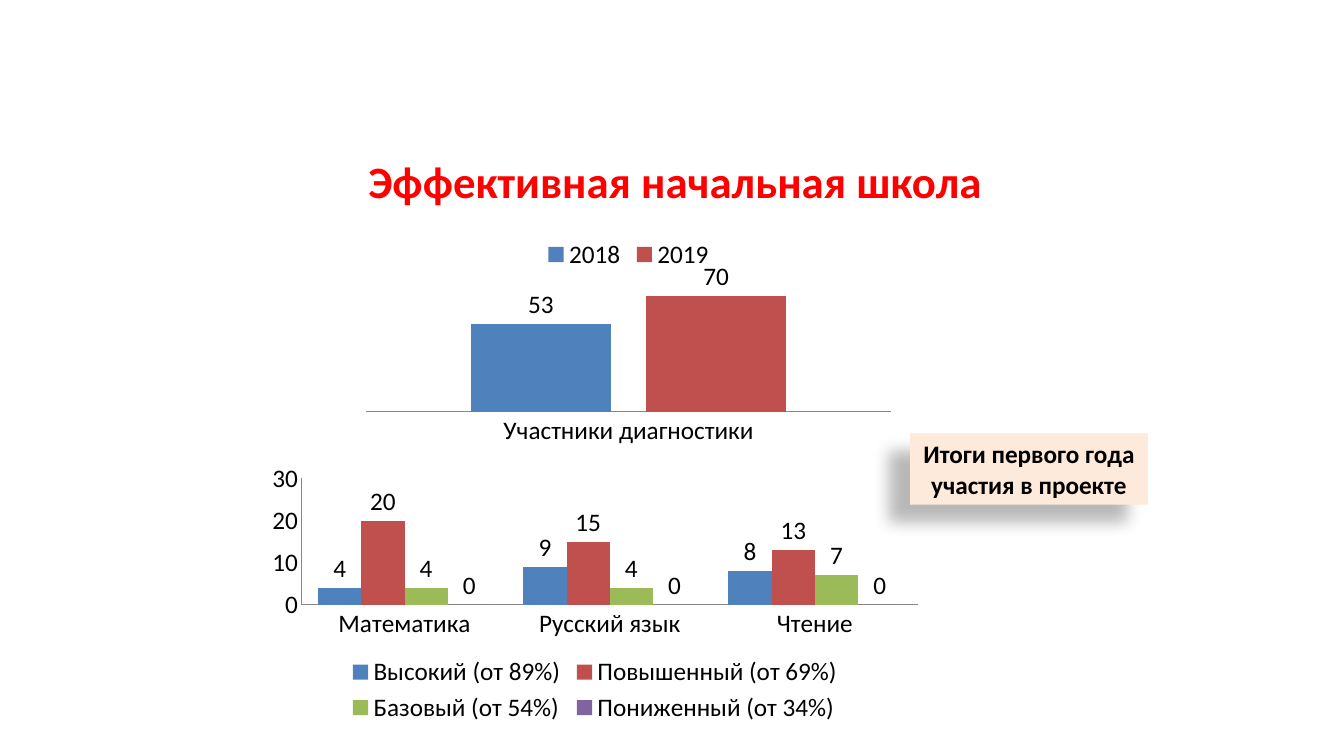
from dataclasses import dataclass

import pptx
import pptx.chart.data
import pptx.dml.color
import pptx.enum.chart
import pptx.enum.shapes
import pptx.enum.text
import pptx.oxml
import pptx.oxml.ns
import pptx.util
from pptx.util import Pt

RGBColor = pptx.dml.color.RGBColor
BLACK = RGBColor(0x00, 0x00, 0x00)
RED = RGBColor(0xFF, 0x00, 0x00)
PEACH = RGBColor(0xFD, 0xEA, 0xDA)
AXIS_GRAY = RGBColor(0x86, 0x86, 0x86)
SERIES_COLORS = (
    RGBColor(0x4F, 0x81, 0xBD),
    RGBColor(0xC0, 0x50, 0x4D),
    RGBColor(0x9B, 0xBB, 0x59),
    RGBColor(0x80, 0x64, 0xA2),
)
FONT = "Calibri"
LEGEND = pptx.enum.chart.XL_LEGEND_POSITION
NO_TICKS = pptx.enum.chart.XL_TICK_MARK.NONE


@dataclass
class Box:
    left: float
    top: float
    width: float
    height: float

    def lengths(self) -> tuple:
        return Pt(self.left), Pt(self.top), Pt(self.width), Pt(self.height)


@dataclass
class ColumnChart:
    box: Box
    categories: tuple
    series: dict
    legend: LEGEND
    gap: int
    overlap: int
    maximum: int
    step: int
    shows_values_axis: bool


PARTICIPANTS = ColumnChart(
    Box(253.5, 162, 391, 160), ("Участники диагностики",),
    {"2018": (53,), "2019": (70,)},
    LEGEND.TOP, 150, -25, 80, 10, False)

RESULTS = ColumnChart(
    Box(185, 327, 480, 193), ("Математика", "Русский язык", "Чтение"),
    {
        "Высокий (от 89%)": (4, 9, 8),
        "Повышенный (от 69%)": (20, 15, 13),
        "Базовый (от 54%)": (4, 4, 7),
        "Пониженный (от 34%)": (0, 0, 0),
    },
    LEGEND.BOTTOM, 75, 0, 30, 10, True)


def set_all(target, values: dict) -> None:
    for name, value in values.items():
        setattr(target, name, value)


def style_font(font, size: float, color: RGBColor, bold: bool) -> None:
    set_all(font, {"name": FONT, "size": Pt(size), "bold": bold})
    font.color.rgb = color


def write_centered(shape, text: str, size: float, color: RGBColor) -> None:
    shape.text_frame.word_wrap = True
    paragraph = shape.text_frame.paragraphs[0]
    paragraph.alignment = pptx.enum.text.PP_ALIGN.CENTER
    run = paragraph.add_run()
    run.text = text
    style_font(run.font, size, color, True)


def draw_chart(slide, item: ColumnChart) -> None:
    data = pptx.chart.data.CategoryChartData()
    data.categories = item.categories
    for name, values in item.series.items():
        data.add_series(name, values)
    chart = slide.shapes.add_chart(
        pptx.enum.chart.XL_CHART_TYPE.COLUMN_CLUSTERED,
        *item.box.lengths(), data).chart
    style_font(chart.font, 18, BLACK, False)
    set_all(chart, {"has_title": False, "has_legend": True})
    set_all(chart.legend, {"position": item.legend, "include_in_layout": False})

    # Axes
    for axis in (chart.category_axis, chart.value_axis):
        set_all(axis, {"has_major_gridlines": False,
                       "major_tick_mark": NO_TICKS,
                       "minor_tick_mark": NO_TICKS})
        axis.format.line.color.rgb = AXIS_GRAY
        axis.format.line.width = Pt(0.75)
    set_all(chart.value_axis, {"visible": item.shows_values_axis,
                               "minimum_scale": 0,
                               "maximum_scale": item.maximum,
                               "major_unit": item.step})

    # Columns and their labels
    plot = chart.plots[0]
    set_all(plot, {"gap_width": item.gap, "overlap": item.overlap,
                   "vary_by_categories": False, "has_data_labels": True})
    set_all(plot.data_labels, {
        "show_value": True,
        "position": pptx.enum.chart.XL_LABEL_POSITION.OUTSIDE_END})
    style_font(plot.data_labels.font, 18, BLACK, False)
    for series, color in zip(plot.series, SERIES_COLORS):
        series.invert_if_negative = False
        series.format.fill.solid()
        series.format.fill.fore_color.rgb = color


def add_shadow(shape, blur: float, distance: float, angle: int, opacity: int) -> None:
    shape.shadow.inherit = False
    effects = shape._element.spPr.find(pptx.oxml.ns.qn("a:effectLst"))
    effects.append(pptx.oxml.parse_xml(
        f'<a:outerShdw {pptx.oxml.ns.nsdecls("a")} blurRad="{Pt(blur)}" '
        f'dist="{Pt(distance)}" dir="{angle * 60000}" algn="tl" rotWithShape="0">'
        f'<a:srgbClr val="{BLACK}"><a:alpha val="{opacity * 1000}"/></a:srgbClr>'
        '</a:outerShdw>'))


def main() -> None:
    deck = pptx.Presentation()
    set_all(deck, {"slide_width": Pt(960), "slide_height": Pt(540)})
    slide = deck.slides.add_slide(deck.slide_layouts[6])

    # Heading
    heading = slide.shapes.add_textbox(*Box(139.5, 106, 686, 380).lengths())
    write_centered(heading, "Эффективная начальная школа", 32, RED)

    # Charts
    for item in (PARTICIPANTS, RESULTS):
        draw_chart(slide, item)

    # Summary of the first year
    summary = slide.shapes.add_shape(
        pptx.enum.shapes.MSO_SHAPE.RECTANGLE, *Box(650, 309.5, 170, 51).lengths())
    summary.fill.solid()
    summary.fill.fore_color.rgb = PEACH
    summary.line.fill.background()
    add_shadow(summary, 11.8, 19.7, 141, 28)
    write_centered(summary, "Итоги первого года участия в проекте", 18, BLACK)
    summary.text_frame.auto_size = pptx.enum.text.MSO_AUTO_SIZE.SHAPE_TO_FIT_TEXT

    deck.save("out.pptx")


if __name__ == "__main__":
    main()
